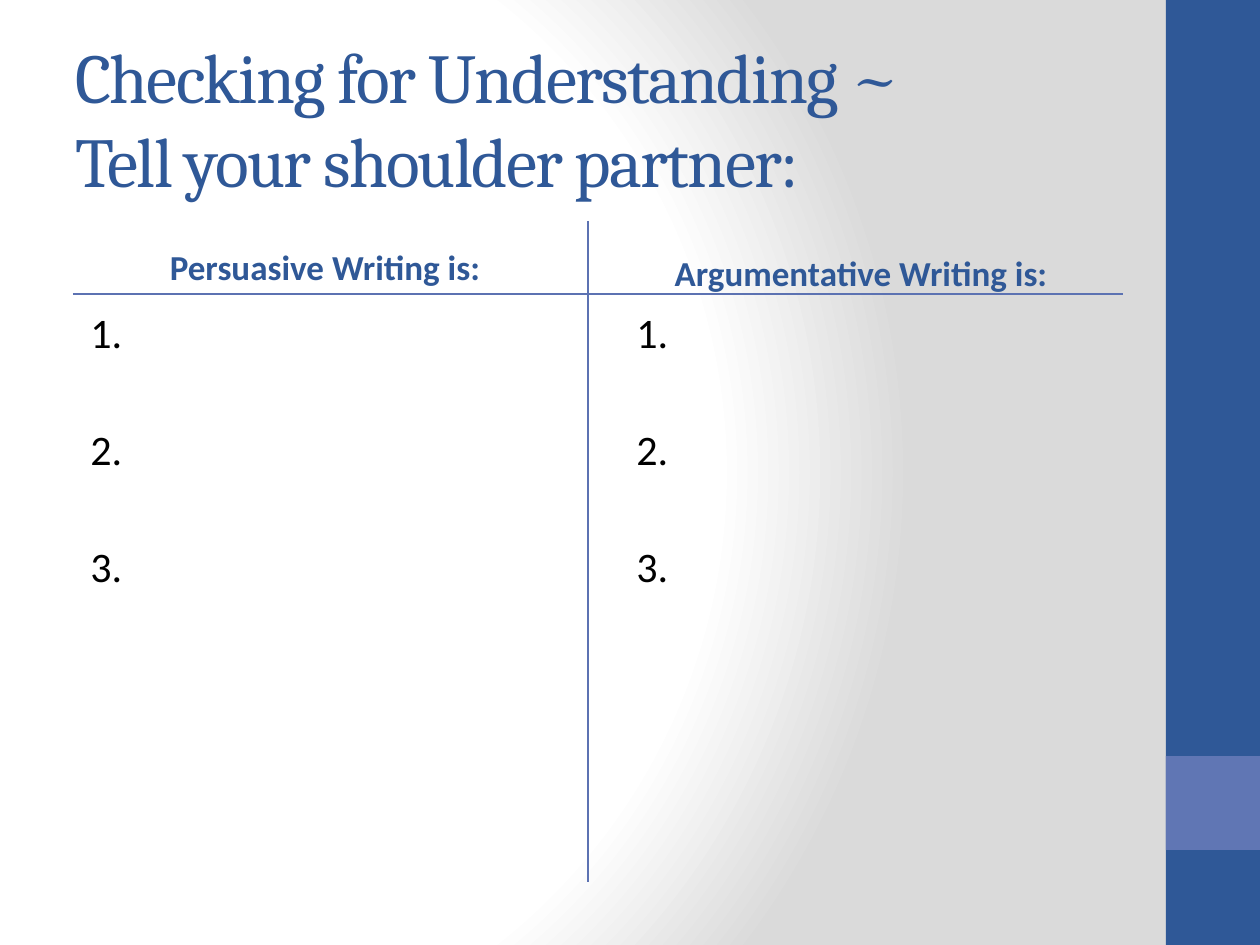
from lxml import etree
from pptx import Presentation
from pptx.dml.color import RGBColor
from pptx.enum.shapes import MSO_CONNECTOR, MSO_SHAPE
from pptx.enum.text import MSO_ANCHOR, PP_ALIGN
from pptx.oxml import parse_xml
from pptx.oxml.ns import nsdecls, qn
from pptx.util import Emu, Pt

COLORS = {
    "navy": "2F5897",
    "violet": "6076B4",
    "rule": "5C72B2",
    "text": "000000",
    "white": "FFFFFF",
    "gray": "DADADA",
}


def px(length):
    """Turn pixels (126 to the inch) into EMU."""
    return Emu(round(length * 914400 / 126))


def color(name):
    return RGBColor.from_string(COLORS[name])


def paint_background(page):
    """Fill the page with a radial gradient, which needs XML."""
    page.background.fill.solid()
    solid = page.element.find(".//" + qn("a:solidFill"))
    stops = "".join(
        f'<a:gs pos="{percent * 1000}"><a:srgbClr val="{COLORS[name]}"/></a:gs>'
        for percent, name in ((0, "white"), (75, "white"), (100, "gray"))
    )
    gradient = parse_xml(
        f'<a:gradFill {nsdecls("a")} rotWithShape="1"><a:gsLst>{stops}</a:gsLst>'
        '<a:path path="circle"><a:fillToRect l="20000" t="50000" r="100000" b="50000"/>'
        "</a:path></a:gradFill>"
    )
    solid.getparent().replace(solid, gradient)


def add_block(page, left, top, width, height, fill):
    block = page.shapes.add_shape(
        MSO_SHAPE.RECTANGLE, px(left), px(top), px(width), px(height)
    )
    block.shadow.inherit = False
    block.fill.solid()
    block.fill.fore_color.rgb = color(fill)
    block.line.fill.background()


def add_side_band(page, left, top, width, height):
    add_block(page, left, top, width, height, "navy")
    add_block(page, left, top + height * 4 // 5, width, width, "violet")


def add_text(page, left, top, width, height, lines, font, size, ink, anchor):
    """Add a wrapped text box with one paragraph per line and return its frame."""
    box = page.shapes.add_textbox(px(left), px(top), px(width), px(height))
    frame = box.text_frame
    frame.word_wrap = True
    frame.vertical_anchor = anchor
    for index, line in enumerate(lines):
        para = frame.paragraphs[0] if index == 0 else frame.add_paragraph()
        para.text = line
        para.font.name = font
        para.font.size = Pt(size)
        para.font.color.rgb = color(ink)
    return frame


def add_title(page, left, top, width, height):
    frame = add_text(
        page, left, top, width, height,
        ["Checking for Understanding ~\vTell your shoulder partner:"],
        "Cambria", 40, "navy", MSO_ANCHOR.MIDDLE,
    )
    for span in frame.paragraphs[0].runs:
        span.font._element.set("spc", "-100")


def add_heading(page, left, top, width, height, words):
    frame = add_text(
        page, left, top, width, height, [words],
        "Calibri", 20, "navy", MSO_ANCHOR.BOTTOM,
    )
    para = frame.paragraphs[0]
    para.alignment = PP_ALIGN.CENTER
    para.font.bold = True


def add_numbers(page, left, top, width, height):
    frame = add_text(
        page, left, top, width, height, ["1.", "2.", "3."],
        "Calibri", 24, "text", MSO_ANCHOR.TOP,
    )
    for para in frame.paragraphs:
        para.space_after = Pt(38)
        para._p.get_or_add_pPr().set("marL", str(px(15)))


def add_rule(page, start_x, start_y, end_x, end_y):
    rule = page.shapes.add_connector(
        MSO_CONNECTOR.STRAIGHT, px(start_x), px(start_y), px(end_x), px(end_y)
    )
    rule.line.color.rgb = color("rule")
    rule.line.width = Pt(1)
    etree.SubElement(rule._element.spPr, qn("a:effectLst"))


def add_comparison(page, left, top, width, height):
    """Draw the two-column chart: headings, numbered lists and crossing rules."""
    column, heading_height, list_top = 504, 88, top + 79
    right = left + 546
    add_heading(page, left + 10, top - 15, column, heading_height, "Persuasive Writing is:")
    add_heading(page, right, top - 9, column, heading_height, "Argumentative Writing is:")
    for list_left in (left, right):
        add_numbers(page, list_left, list_top, column, 544)
    add_rule(page, left + 10, top + 73, left + width, top + 73)
    add_rule(page, left + 525, top, left + 525, top + height)


def main():
    deck = Presentation()
    deck.slide_width, deck.slide_height = px(1260), px(945)
    page = deck.slides.add_slide(deck.slide_layouts[6])
    paint_background(page)
    add_side_band(page, 1166, 0, 94, 945)
    add_title(page, 63, 38, 1050, 158)
    add_comparison(page, 63, 221, 1060, 661)
    deck.save("out.pptx")


if __name__ == "__main__":
    main()
